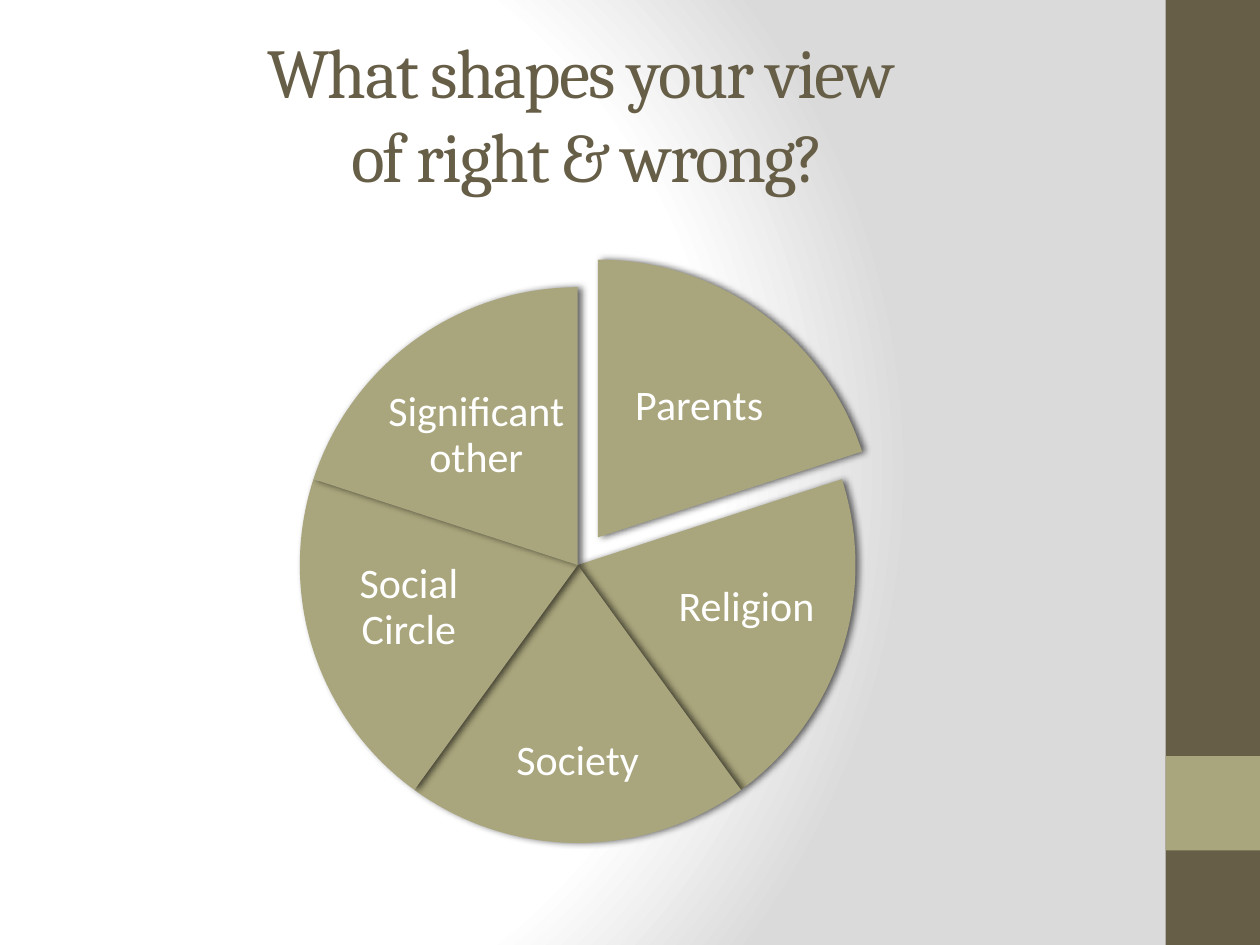
from lxml import etree
from pptx import Presentation
from pptx.dml.color import RGBColor as RGB
from pptx.enum.shapes import MSO_SHAPE as Form
from pptx.enum.text import MSO_ANCHOR as Anchor, PP_ALIGN as Align
from pptx.oxml import parse_xml
from pptx.oxml.ns import qn
from pptx.util import Inches, Pt

BROWN = RGB(0x67, 0x5E, 0x47)
OLIVE = RGB(0xA9, 0xA5, 0x7C)
WHITE = RGB(0xFF, 0xFF, 0xFF)
GREY = RGB(0xDA, 0xDA, 0xDA)
BLACK = RGB(0, 0, 0)

COLS, ROWS = 100, 75
TURN = 216  # one full circle in units of the pie adjustments
FIRST = 162  # twelve o'clock
PIE = 44.1  # diameter
HOME = (23.8, 22.8)
PULLED = (25.4, 20.6)

# Clockwise from twelve o'clock: label, its box, corner of its circle
SLICES = [
    ("Parents", (48, 27.2, 15, 10.2), PULLED),
    ("Religion", (52.7, 42.7, 13.1, 11.1), HOME),
    ("Society", (38, 55.8, 15.7, 9.4), HOME),
    ("Social Circle", (25.9, 42.7, 13.1, 11.1), HOME),
    ("Significant other", (30.3, 29.5, 15, 10.2), HOME),
]


def write(frame, text, font="Calibri", size=24, color=WHITE, track=0,
          line=None, after=None):
    """Fill a frame with one centred paragraph; track is letter spacing in points."""
    frame.word_wrap = True
    frame.vertical_anchor = Anchor.MIDDLE
    para = frame.paragraphs[0]
    para.text = text
    para.alignment = Align.CENTER
    para.line_spacing = line
    para.space_after = after
    for run in para.runs:
        run.font.name = font
        run.font.size = Pt(size)
        run.font.color.rgb = color
        if track:
            run.font._element.set("spc", str(int(track * 100)))


class Deck:
    def __init__(self):
        self.file = Presentation()
        self.file.slide_width = Inches(10)
        self.file.slide_height = Inches(7.5)
        self.slide = self.file.slides.add_slide(self.file.slide_layouts[6])

    def place(self, left, top, width, height):
        """Turn grid columns and rows into slide lengths."""
        col = self.file.slide_width / COLS
        row = self.file.slide_height / ROWS
        return [round(n) for n in (left * col, top * row, width * col, height * row)]

    def glow(self, inner, outer):
        """Paint a round background gradient, plain up to three quarters."""
        fill = self.slide.background.fill
        fill.gradient()
        grad = self.slide._element.cSld.find(".//" + qn("a:gradFill"))
        stops = "".join(
            f'<a:gs pos="{pos}000"><a:srgbClr val="{color}"/></a:gs>'
            for pos, color in ((0, inner), (75, inner), (100, outer)))
        grad.getparent().replace(grad, parse_xml(
            '<a:gradFill rotWithShape="1"'
            ' xmlns:a="http://schemas.openxmlformats.org/drawingml/2006/main">'
            f'<a:gsLst>{stops}</a:gsLst><a:path path="circle">'
            '<a:fillToRect l="20000" t="50000" r="100000" b="50000"/>'
            '</a:path></a:gradFill>'))

    def shape(self, form, box, color):
        shape = self.slide.shapes.add_shape(form, *self.place(*box))
        shape.shadow.inherit = False
        shape.fill.solid()
        shape.fill.fore_color.rgb = color
        shape.line.fill.background()
        return shape

    def slice(self, corner, start, end):
        shape = self.shape(Form.PIE, (*corner, PIE, PIE), OLIVE)
        shape.adjustments[0] = start
        shape.adjustments[1] = end
        effects = shape._element.spPr.find(qn("a:effectLst"))
        shade = etree.SubElement(effects, qn("a:outerShdw"), blurRad=str(Pt(4)),
                                 dist=str(Pt(2)), dir="0", rotWithShape="0")
        tint = etree.SubElement(shade, qn("a:srgbClr"), val=str(BLACK))
        etree.SubElement(tint, qn("a:alpha"), val="60000")

    def text(self, box, text, inset=None, **style):
        frame = self.slide.shapes.add_textbox(*self.place(*box)).text_frame
        if inset is not None:
            frame.margin_left = frame.margin_right = inset
            frame.margin_top = frame.margin_bottom = inset
        write(frame, text, **style)


def main():
    deck = Deck()
    deck.glow(WHITE, GREY)
    deck.shape(Form.RECTANGLE, (92.5, 0, 7.5, ROWS), BROWN)
    deck.shape(Form.RECTANGLE, (92.5, 60, 7.5, 7.5), OLIVE)
    deck.text((5, 2.7, 83.3, 12.5), "What shapes your view \vof right & wrong?",
              font="Cambria", size=40, color=BROWN, track=-1)

    step = TURN / len(SLICES)
    for i, (label, box, corner) in enumerate(SLICES):
        start = FIRST + i * step
        deck.slice(corner, start % TURN, (start + step - TURN) % TURN)
        deck.text(box, label, inset=Inches(0.03), line=0.9, after=Pt(8.4))
    deck.file.save("out.pptx")


if __name__ == "__main__":
    main()
